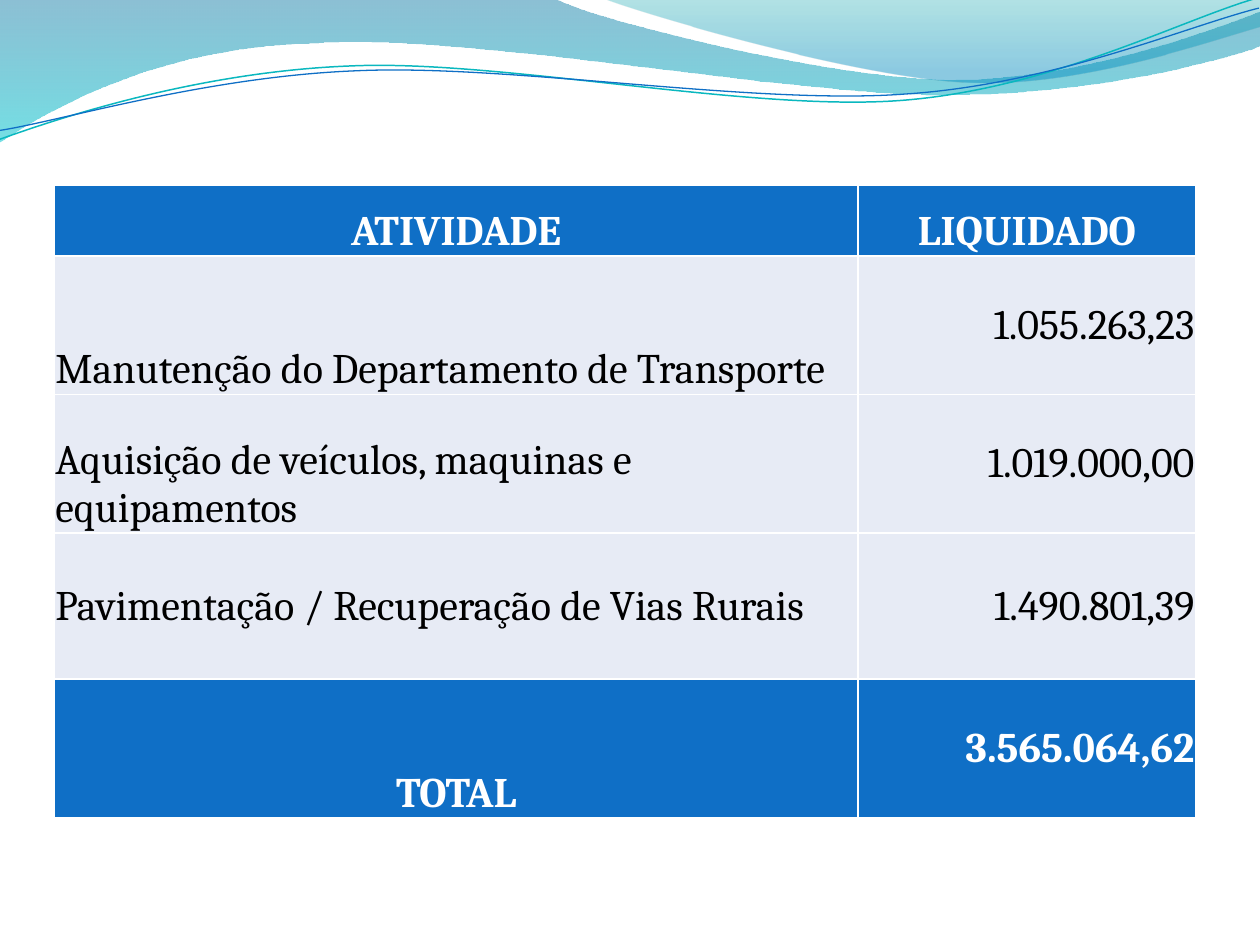
import pptx
import pptx.dml.color
import pptx.enum.text
import pptx.oxml
import pptx.oxml.ns
import pptx.util

COLUMNS, ROWS = 10, 7.5
UNIT = pptx.util.Inches(1)
BLUE, PALE, WHITE, BLACK = "0F6FC6", "E7EBF5", "FFFFFF", "000000"
WAVE_TILT = 357.3
ALIGN = pptx.enum.text.PP_ALIGN
ANCHOR = pptx.enum.text.MSO_ANCHOR

BANDS = [
    ([(0, 0), (4.4, -0.01), (4.76, 0.17, 6.64, 0.63, 7.58, 0.63),
      (8.53, 0.63, 9.58, 0.26, 10, 0.09), (10.01, 0.36),
      (9.83, 0.44, 8.7, 0.76, 7.46, 0.75), (6.22, 0.75, 3.82, 0.28, 2.57, 0.34),
      (1.29, 0.36, 0.46, 0.83, -0.01, 1.13), (0, 0)],
     [(0, "0074A1", 45), (1, "00C6CF", 55)]),
    ([(4.79, -0.01), (5.09, 0.11, 6.82, 0.62, 7.69, 0.65),
      (8.56, 0.69, 9.61, 0.32, 10, 0.21), (10, 0), (4.79, -0.01)],
     [(0, "00A1A9", 30), (0.8, "008BBF", 45)]),
]
WAVES = [
    ([(-0.02, 0.87), (0.47, 0.72, 1.58, 0.41, 2.78, 0.42),
      (3.96, 0.42, 5.91, 0.93, 7.12, 0.9), (8.32, 0.87, 9.4, 0.36, 10, 0.22)],
     "0AB8BF", 0.85),
    ([(-0.02, 0.8), (0.46, 0.75, 1.64, 0.45, 2.83, 0.46),
      (4.03, 0.46, 5.96, 0.88, 7.16, 0.85), (8.35, 0.83, 9.42, 0.42, 10.01, 0.3)],
     BLUE, 0.75),
]
EXPENSES = [
    ("ATIVIDADE", "LIQUIDADO"),
    ("Manutenção do Departamento de Transporte", "1.055.263,23"),
    ("Aquisição de veículos, maquinas e equipamentos", "1.019.000,00"),
    ("Pavimentação / Recuperação de Vias Rurais", "1.490.801,39"),
    ("TOTAL", "3.565.064,62"),
]
COLUMN_WIDTHS = [6.38, 2.68]
ROW_HEIGHTS = [0.56, 1.1, 1.1, 1.16, 1.1]


def color(value):
    return pptx.dml.color.RGBColor.from_string(value)


def grid(value):
    return pptx.util.Emu(round(value * UNIT))


def bend_lines(shape, segments):
    lines = list(shape._element.iter(pptx.oxml.ns.qn("a:lnTo")))
    for segment in segments:
        count = len(segment) // 2
        parts, lines = lines[:count], lines[count:]
        if count == 1:
            continue
        curve = pptx.oxml.parse_xml(f'<a:cubicBezTo {pptx.oxml.ns.nsdecls("a")}/>')
        parts[0].addprevious(curve)
        for part in parts:
            curve.append(part[0])
            part.getparent().remove(part)


def add_outline(shapes, box, segments, close):
    left, top = box[:2]
    points = [(grid(left + x), grid(top + y))
              for segment in segments for x, y in zip(segment[::2], segment[1::2])]
    builder = shapes.build_freeform(*points[0], scale=1.0)
    builder.add_line_segments(points[1:], close=close)
    shape = builder.convert_to_shape()
    shape.shadow.inherit = False
    bend_lines(shape, segments[1:])
    return shape


def add_bands(page, box):
    for segments, stops in BANDS:
        band = add_outline(page.shapes, box, segments, True)
        band.line.fill.background()
        band.fill.gradient()
        band.fill.gradient_angle = 270
        for stop, (position, shade, opacity) in zip(band.fill.gradient_stops, stops):
            stop.position = position
            stop.color.rgb = color(shade)
        tints = band._element.spPr.iter(pptx.oxml.ns.qn("a:srgbClr"))
        for tint, (position, shade, opacity) in zip(tints, stops):
            tint.append(pptx.oxml.parse_xml(
                f'<a:alpha {pptx.oxml.ns.nsdecls("a")} val="{opacity * 1000}"/>'))


def add_waves(page, box):
    group = page.shapes.add_group_shape()
    for segments, shade, weight in WAVES:
        wave = add_outline(group.shapes, box, segments, False)
        wave.rotation = WAVE_TILT
        wave.fill.background()
        wave.line.color.rgb = color(shade)
        wave.line.width = pptx.util.Pt(weight)


def set_borders(cell):
    properties = cell._tc.get_or_add_tcPr()
    for index, side in enumerate("LRTB"):
        properties.insert(index, pptx.oxml.parse_xml(
            f'<a:ln{side} {pptx.oxml.ns.nsdecls("a")} w="{pptx.util.Pt(1)}"><a:solidFill>'
            f'<a:srgbClr val="{WHITE}"/></a:solidFill></a:ln{side}>'))


def fill_cell(cell, text, strong, align, anchor):
    cell.text = text
    cell.vertical_anchor = anchor
    cell.margin_left = cell.margin_right = cell.margin_top = grid(0.01)
    cell.margin_bottom = 0
    cell.fill.solid()
    cell.fill.fore_color.rgb = color(BLUE if strong else PALE)
    set_borders(cell)
    para = cell.text_frame.paragraphs[0]
    para.alignment = align
    para.font.name = "Cambria"
    para.font.size = pptx.util.Pt(24)
    para.font.bold = strong
    para.font.color.rgb = color(WHITE if strong else BLACK)


def add_expenses(page, box):
    frame = page.shapes.add_table(len(EXPENSES), len(COLUMN_WIDTHS), *map(grid, box))
    table = frame.table
    table.first_row = table.horz_banding = False
    for column, width in zip(table.columns, COLUMN_WIDTHS):
        column.width = grid(width)
    last = len(EXPENSES) - 1
    for index, (activity, amount) in enumerate(EXPENSES):
        table.rows[index].height = grid(ROW_HEIGHTS[index])
        strong = index in (0, last)
        fill_cell(table.cell(index, 0), activity, strong,
                  ALIGN.CENTER if strong else ALIGN.LEFT,
                  ANCHOR.MIDDLE if index == last - 1 else ANCHOR.BOTTOM)
        fill_cell(table.cell(index, 1), amount, strong,
                  ALIGN.RIGHT if index else ALIGN.CENTER,
                  ANCHOR.MIDDLE if index else ANCHOR.BOTTOM)


def main():
    deck = pptx.Presentation()
    deck.slide_width, deck.slide_height = grid(COLUMNS), grid(ROWS)
    page = deck.slides.add_slide(deck.slide_layouts[6])
    page.background.fill.solid()
    page.background.fill.fore_color.rgb = color(WHITE)
    ribbon = (0, 0, COLUMNS, 1.14)
    add_bands(page, ribbon)
    add_waves(page, ribbon)
    add_expenses(page, (0.43, 1.47, sum(COLUMN_WIDTHS), sum(ROW_HEIGHTS)))
    deck.save("out.pptx")


if __name__ == "__main__":
    main()
